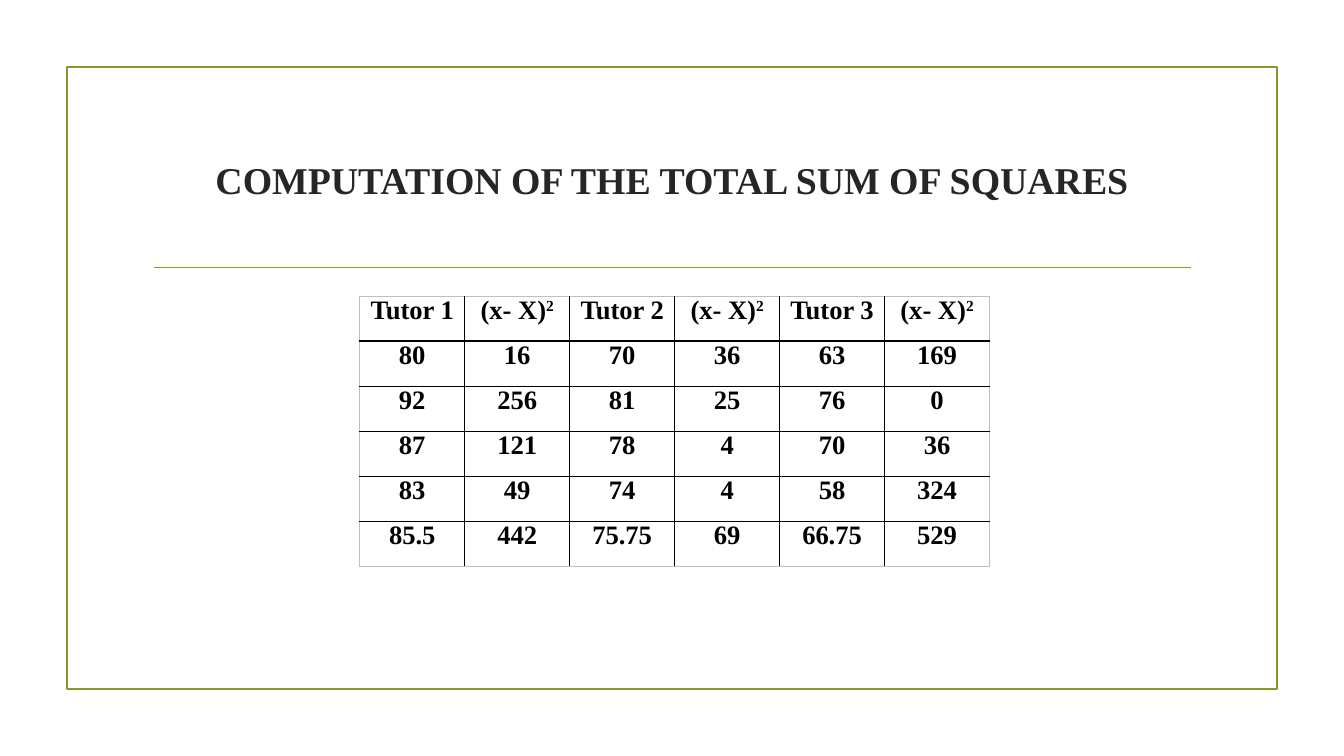
from lxml import etree
from pptx import Presentation
from pptx.dml.color import RGBColor
from pptx.enum.shapes import MSO_CONNECTOR, MSO_SHAPE
from pptx.enum.text import MSO_ANCHOR, PP_ALIGN
from pptx.oxml.ns import qn
from pptx.util import Pt

LINE, RECT = MSO_CONNECTOR.STRAIGHT, MSO_SHAPE.RECTANGLE
MID, TOP, MIDDLE = PP_ALIGN.CENTER, MSO_ANCHOR.TOP, MSO_ANCHOR.MIDDLE

TITLE = "COMPUTATION OF THE TOTAL SUM OF SQUARES"
SQUARE = "(x- X)^2"
ROWS = [
    ("Tutor 1", SQUARE, "Tutor 2", SQUARE, "Tutor 3", SQUARE),
    ("80", "16", "70", "36", "63", "169"),
    ("92", "256", "81", "25", "76", "0"),
    ("87", "121", "78", "4", "70", "36"),
    ("83", "49", "74", "4", "58", "324"),
    ("85.5", "442", "75.75", "69", "66.75", "529"),
]
GREEN, DARK, BLACK, GREY = "83992A", "262626", "000000", "BFBFBF"
FACE = "Times New Roman"
WIDE, HIGH = 75, 32.15
LEFT, HEAD = 257, 211.5


def color(code):
    return RGBColor.from_string(code)


def apply(item, form):
    for name, value in form.items():
        setattr(item, name, value)


def stroke(line):
    line.color.rgb = color(GREEN)
    line.width = Pt(1.25)


def write(para, text, size, code):
    para.alignment = MID
    base, mark, power = text.partition("^")
    for part in filter(None, (base, power)):
        run = para.add_run()
        run.text = part
        apply(run.font, {"name": FACE, "size": Pt(size), "bold": True})
        run.font.color.rgb = color(code)
        if part is power:
            run.font._element.set("baseline", "30000")


def edge(cell, side, outer):
    width = Pt(0.5 if outer else 1)
    props = cell._tc.get_or_add_tcPr()
    line = etree.SubElement(props, qn("a:ln" + side), w=str(width))
    fill = etree.SubElement(line, qn("a:solidFill"))
    etree.SubElement(fill, qn("a:srgbClr"), val=GREY if outer else BLACK)


deck = Presentation()
apply(deck, {"slide_width": Pt(960), "slide_height": Pt(540)})
slide = deck.slides.add_slide(deck.slide_layouts[6])
shapes = slide.shapes

frame = shapes.add_shape(RECT, Pt(48), Pt(48), Pt(864), Pt(444))
frame.shadow.inherit = False
frame.fill.background()
stroke(frame.line)

rule = shapes.add_connector(LINE, Pt(110), Pt(191), Pt(850.5), Pt(191))
stroke(rule.line)
etree.SubElement(rule._element.spPr, qn("a:effectLst"))

title = shapes.add_textbox(Pt(102), Pt(77), Pt(756), Pt(103)).text_frame
apply(title, {"word_wrap": True, "vertical_anchor": MIDDLE})
write(title.paragraphs[0], TITLE, 27, DARK)

rows, cols = len(ROWS), len(ROWS[0])
table = shapes.add_table(rows, cols, Pt(LEFT), Pt(HEAD),
                         Pt(cols * WIDE), Pt(rows * HIGH)).table
apply(table, {"first_row": False, "horz_banding": False})
for col in table.columns:
    col.width = Pt(WIDE)
for r, values in enumerate(ROWS):
    table.rows[r].height = Pt(HIGH)
    for c, text in enumerate(values):
        cell = table.cell(r, c)
        apply(cell, {"margin_left": Pt(4.3), "margin_right": Pt(4.3),
                     "margin_top": 0, "margin_bottom": 0,
                     "vertical_anchor": TOP})
        sides = {"L": c == 0, "R": c == cols - 1,
                 "T": r == 0, "B": r == rows - 1}
        for side, outer in sides.items():
            edge(cell, side, outer)
        cell.fill.background()
        write(cell.text_frame.paragraphs[0], text, 19, BLACK)

deck.save("out.pptx")
